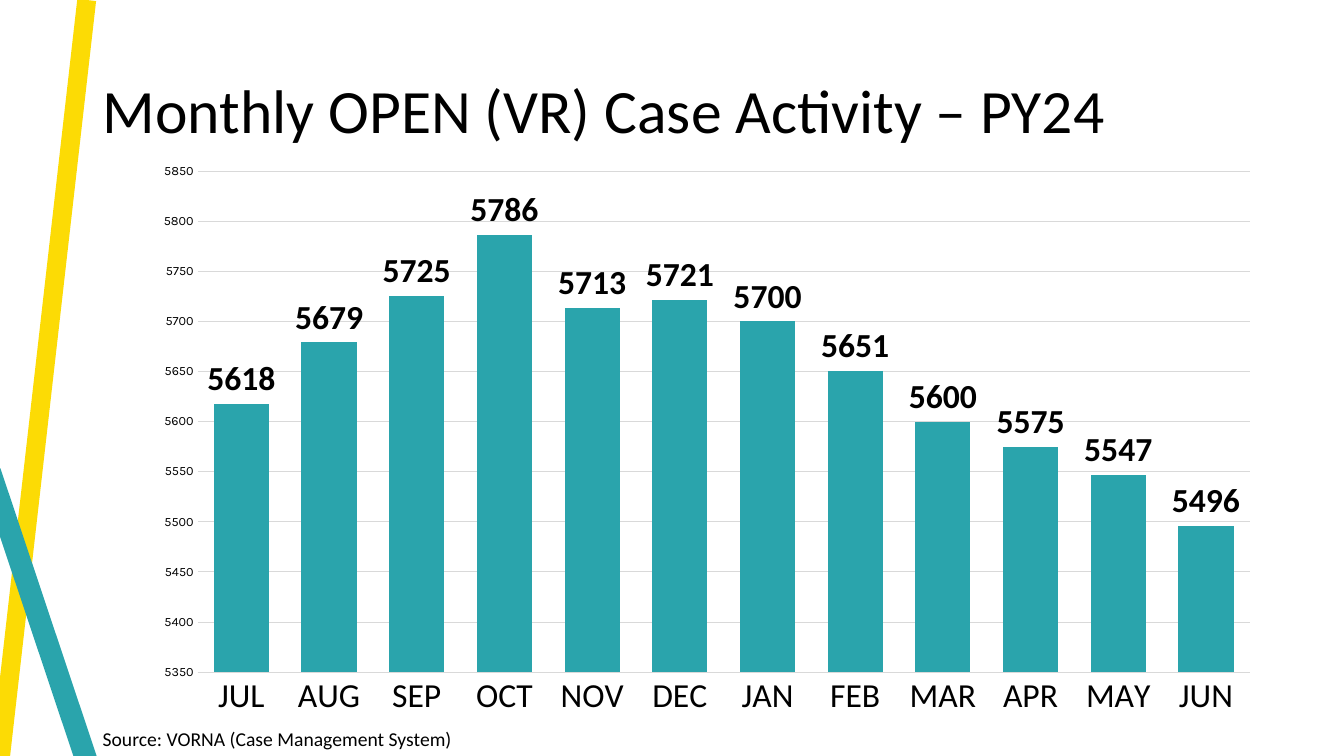
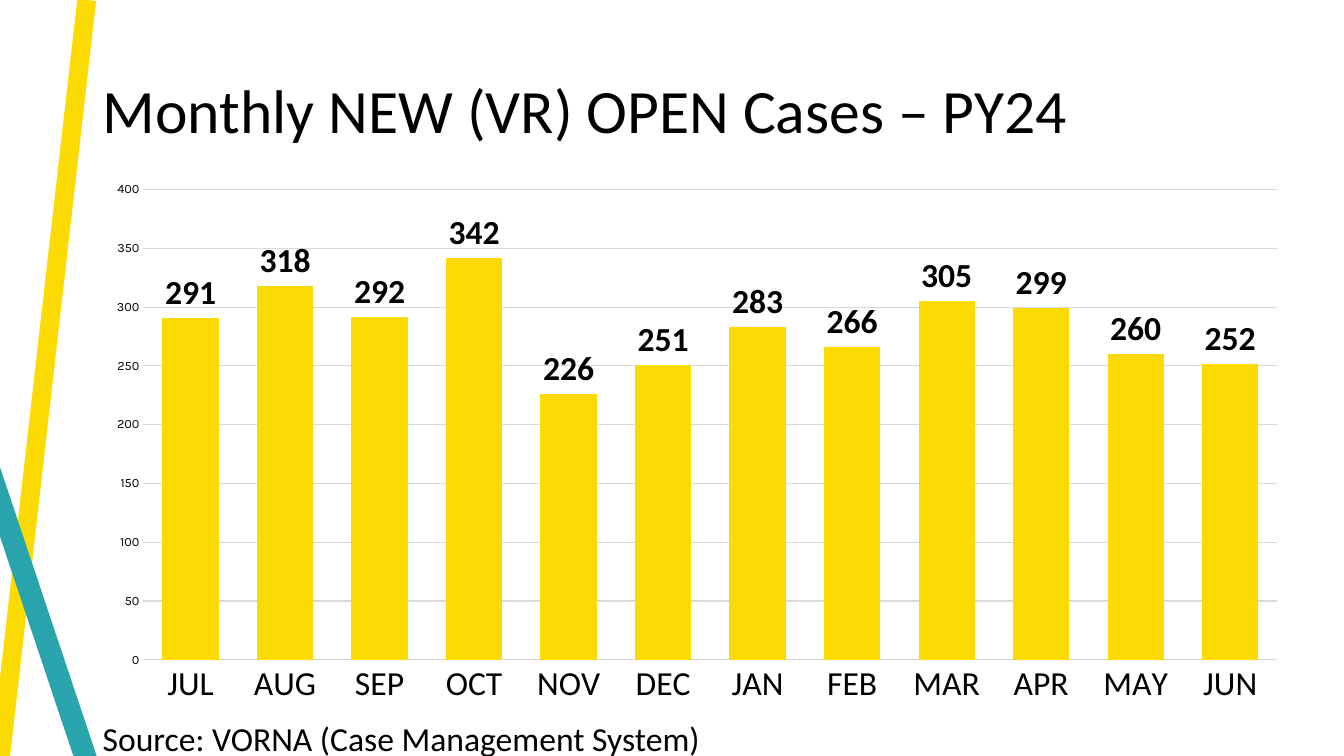
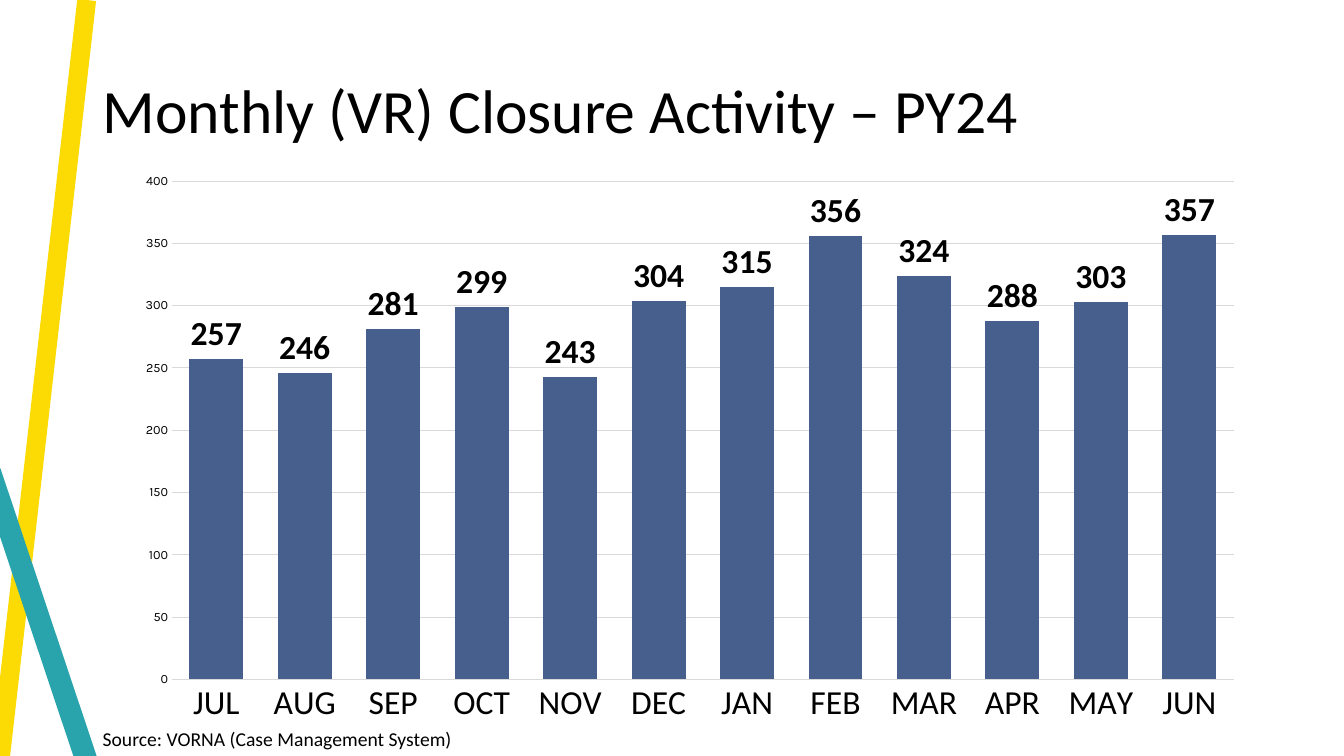
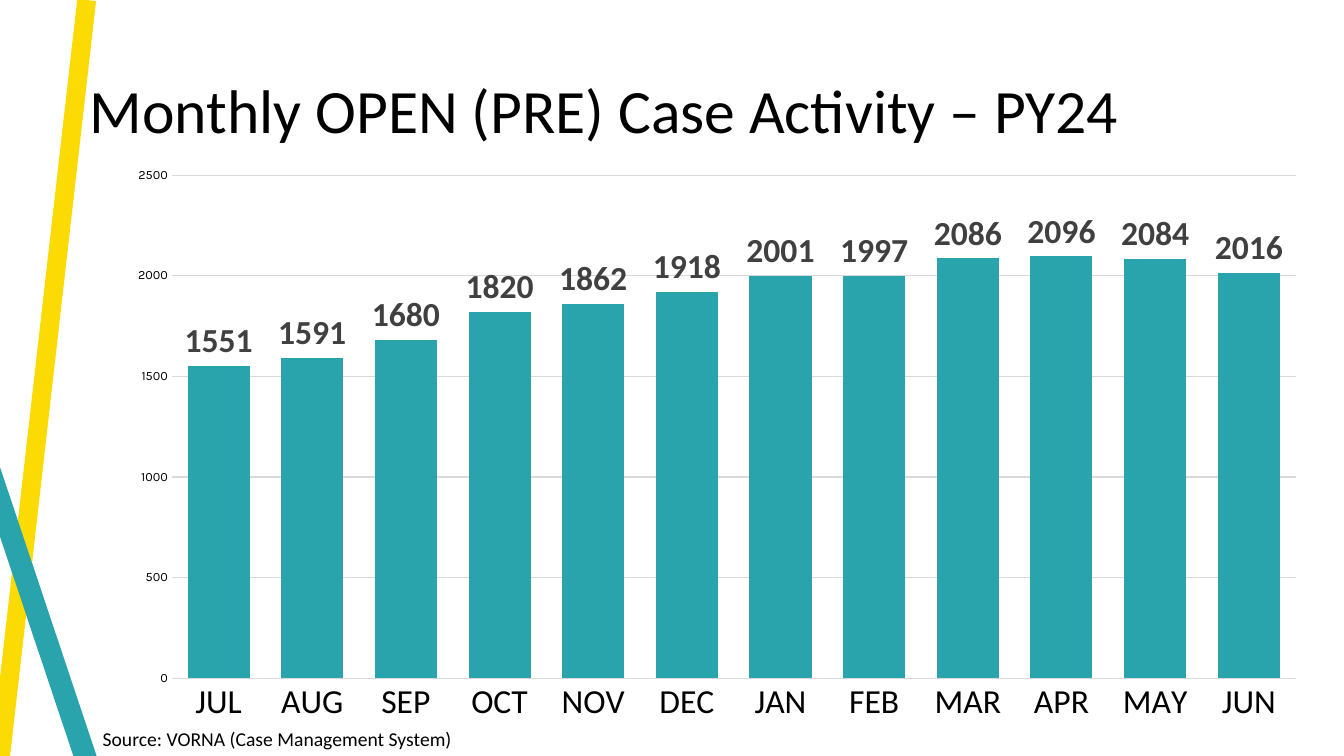
from dataclasses import dataclass

from lxml import etree
from pptx import Presentation
from pptx.chart.axis import CategoryAxis, ValueAxis
from pptx.chart.data import CategoryChartData
from pptx.dml.color import RGBColor
from pptx.dml.line import LineFormat
from pptx.enum.chart import XL_CHART_TYPE, XL_LABEL_POSITION, XL_TICK_MARK
from pptx.enum.shapes import MSO_CONNECTOR
from pptx.enum.text import MSO_ANCHOR, MSO_AUTO_SIZE, PP_ALIGN
from pptx.oxml.ns import qn
from pptx.presentation import Presentation as Deck
from pptx.slide import Slide
from pptx.text.text import Font, TextFrame
from pptx.util import Inches, Pt

COLUMNS = XL_CHART_TYPE.COLUMN_CLUSTERED
OUTSIDE_END = XL_LABEL_POSITION.OUTSIDE_END
NO_TICK = XL_TICK_MARK.NONE
STRAIGHT = MSO_CONNECTOR.STRAIGHT
MIDDLE, TOP = MSO_ANCHOR.MIDDLE, MSO_ANCHOR.TOP
NO_FIT, GROW = MSO_AUTO_SIZE.NONE, MSO_AUTO_SIZE.SHAPE_TO_FIT_TEXT
LEFT = PP_ALIGN.LEFT

BLACK, WHITE, CHARCOAL, GRID_GRAY = "000000", "FFFFFF", "404040", "D9D9D9"
YELLOW, TEAL, NAVY = "FCDB05", "2AA4AC", "465F8D"
TEXT_FONT, AXIS_FONT = "Calibri", "Karla"
TITLE_ONLY = 5

MONTHS = ("JUL", "AUG", "SEP", "OCT", "NOV", "DEC",
          "JAN", "FEB", "MAR", "APR", "MAY", "JUN")
SOURCE = "Source: VORNA (Case Management System)"


@dataclass(frozen=True)
class Box:
    left: float
    top: float
    width: float
    height: float

    def lengths(self) -> tuple[Inches, Inches, Inches, Inches]:
        return (Inches(self.left), Inches(self.top),
                Inches(self.width), Inches(self.height))


@dataclass(frozen=True)
class Stripe:
    start: tuple[float, float]
    end: tuple[float, float]
    color: str
    weight: float


TITLE_BOX = Box(0.92, 0.4, 11.5, 1.45)
SMALL_SOURCE = Box(0.92, 7.16, 3.74, 0.34)
LARGE_SOURCE = Box(0.92, 7.07, 6.26, 0.5)


@dataclass(frozen=True)
class MonthlyReport:
    title: str
    chart_box: Box
    cases: tuple[int, ...]
    color: str
    gap: int
    label_color: str = BLACK
    title_left: float = TITLE_BOX.left
    source_box: Box = SMALL_SOURCE
    source_size: float = 14


STRIPES = (
    Stripe((0.86, 0), (0, 7.55), YELLOW, 13.5),
    Stripe((-0.1, 4.68), (0.86, 7.55), TEAL, 15.75),
)

REPORTS = (
    MonthlyReport(
        "Monthly OPEN (VR) Case Activity – PY24", Box(1.4, 1.51, 11.22, 5.72),
        (5618, 5679, 5725, 5786, 5713, 5721, 5700, 5651, 5600, 5575, 5547, 5496),
        TEAL, 59),
    MonthlyReport(
        "Monthly NEW (VR) OPEN Cases – PY24", Box(0.92, 1.7, 11.99, 5.4),
        (291, 318, 292, 342, 226, 251, 283, 266, 305, 299, 260, 252),
        YELLOW, 68, source_box=LARGE_SOURCE, source_size=24),
    MonthlyReport(
        "Monthly (VR) Closure Activity – PY24", Box(1.22, 1.61, 11.24, 5.69),
        (257, 246, 281, 299, 243, 304, 315, 356, 324, 288, 303, 357),
        NAVY, 64),
    MonthlyReport(
        "Monthly OPEN (PRE) Case Activity – PY24", Box(1.13, 1.55, 11.96, 5.74),
        (1551, 1591, 1680, 1820, 1862, 1918, 2001, 1997, 2086, 2096, 2084, 2016),
        TEAL, 51, label_color=CHARCOAL, title_left=0.79),
)


def rgb(color: str) -> RGBColor:
    return RGBColor.from_string(color)


def style_font(font: Font, size: float, *, name: str = TEXT_FONT,
               color: str = BLACK, bold: bool = False) -> None:
    font.size = Pt(size)
    font.name = name
    font.bold = bold
    font.color.rgb = rgb(color)


def style_line(line: LineFormat, color: str, weight: float) -> None:
    line.color.rgb = rgb(color)
    line.width = Pt(weight)


def write_text(frame: TextFrame, text: str, *, size: float, wrap: bool = True,
               anchor: MSO_ANCHOR = TOP, fit: MSO_AUTO_SIZE = NO_FIT,
               line_spacing: float = 1.0) -> None:
    frame.word_wrap = wrap
    frame.auto_size = fit
    frame.vertical_anchor = anchor
    paragraph = frame.paragraphs[0]
    paragraph.alignment = LEFT
    paragraph.line_spacing = line_spacing
    run = paragraph.add_run()
    run.text = text
    style_font(run.font, size)


def add_master_stripes(deck: Deck, slide: Slide) -> None:
    """Draw the stripes on a slide, then move them to the master."""
    for stripe in STRIPES:
        ends = [Inches(value) for value in (*stripe.start, *stripe.end)]
        connector = slide.shapes.add_connector(STRAIGHT, *ends)
        style_line(connector.line, stripe.color, stripe.weight)
        etree.SubElement(connector.element.spPr, qn("a:effectLst"))
        deck.slide_master.shapes.element.append(connector.element)


def style_axis(axis: CategoryAxis | ValueAxis, size: float, font_name: str) -> None:
    axis.major_tick_mark = NO_TICK
    axis.minor_tick_mark = NO_TICK
    style_font(axis.tick_labels.font, size, name=font_name)


def add_case_chart(slide: Slide, report: MonthlyReport) -> None:
    case_data = CategoryChartData()
    case_data.categories = MONTHS
    case_data.add_series("Series 1", report.cases)
    chart = slide.shapes.add_chart(
        COLUMNS, *report.chart_box.lengths(), case_data).chart
    chart.has_title = False
    chart.has_legend = False
    style_font(chart.font, 10, name=AXIS_FONT)

    months, counts = chart.category_axis, chart.value_axis
    style_axis(months, 24, TEXT_FONT)
    style_line(months.format.line, GRID_GRAY, 0.75)
    style_axis(counts, 9, AXIS_FONT)
    counts.format.line.fill.background()
    counts.has_major_gridlines = True
    style_line(counts.major_gridlines.format.line, GRID_GRAY, 0.75)

    plot = chart.plots[0]
    plot.gap_width = report.gap
    plot.overlap = -27
    plot.vary_by_categories = False
    columns = plot.series[0]
    columns.format.fill.solid()
    columns.format.fill.fore_color.rgb = rgb(report.color)
    columns.format.line.fill.background()
    labels = columns.data_labels
    labels.show_value = True
    labels.position = OUTSIDE_END
    style_font(labels.font, 24, color=report.label_color, bold=True)


def add_report_slide(deck: Deck, report: MonthlyReport) -> Slide:
    slide = deck.slides.add_slide(deck.slide_layouts[TITLE_ONLY])
    title = slide.shapes.title
    title.left, title.top, title.width, title.height = TITLE_BOX.lengths()
    title.left = Inches(report.title_left)
    write_text(title.text_frame, report.title, size=44, anchor=MIDDLE,
               line_spacing=0.9)
    add_case_chart(slide, report)
    source = slide.shapes.add_textbox(*report.source_box.lengths())
    write_text(source.text_frame, SOURCE, size=report.source_size,
               wrap=False, fit=GROW)
    return slide


def main() -> None:
    deck = Presentation()
    deck.slide_width, deck.slide_height = Inches(13.33), Inches(7.5)
    background = deck.slide_master.background.fill
    background.solid()
    background.fore_color.rgb = rgb(WHITE)
    slides = [add_report_slide(deck, report) for report in REPORTS]
    add_master_stripes(deck, slides[0])
    deck.save("out.pptx")


if __name__ == "__main__":
    main()
